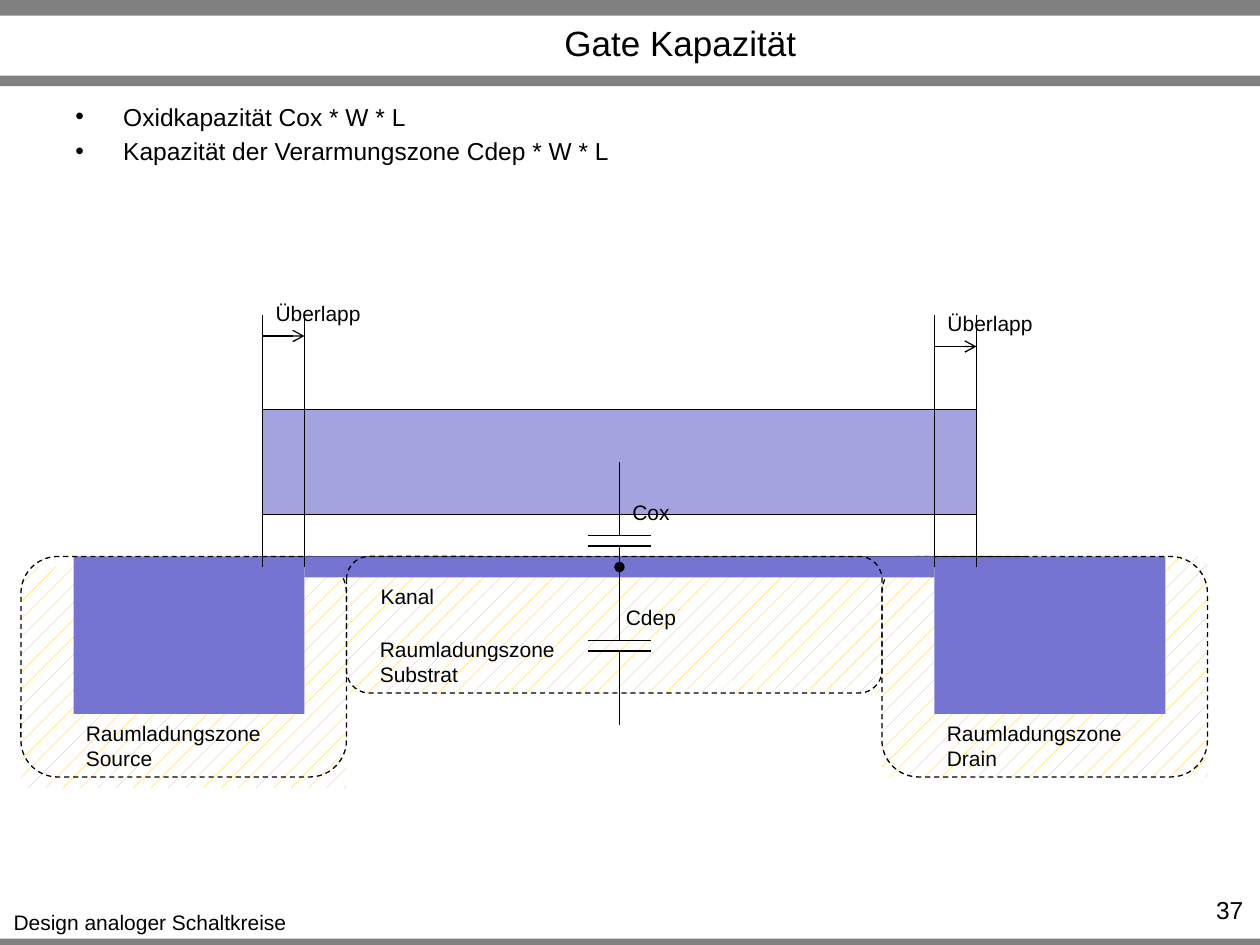
from dataclasses import dataclass

from lxml import etree
from pptx import Presentation
from pptx import util as u
from pptx.dml.color import RGBColor
from pptx.enum import dml, shapes, text
from pptx.oxml import ns


@dataclass(frozen=True)
class Theme:
    font: str = "Arial"
    ink: str = "000000"
    paper: str = "FFFFFF"
    bar: str = "808080"
    gate: str = "A3A3E0"
    doped: str = "7575D1"
    hatch: str = "FFC000"
    title: int = 20
    body: int = 14
    label: int = 12
    stroke: float = 0.75


THEME = Theme()
LEFT, CENTER, RIGHT = (text.PP_ALIGN.LEFT, text.PP_ALIGN.CENTER, text.PP_ALIGN.RIGHT)


def color(code):
    return RGBColor.from_string(code)


def cells(count):
    return u.Inches(count / 12)


def add_xml(parent, tag, **attributes):
    return etree.SubElement(parent, ns.qn(tag), attributes)


def write(frame, content, size=THEME.label, align=LEFT, wrap=True,
          anchor=text.MSO_ANCHOR.TOP, bullet=None, gap=0):
    frame.word_wrap = wrap
    frame.vertical_anchor = anchor
    for index, line in enumerate(content.split("\n")):
        para = frame.paragraphs[0] if index == 0 else frame.add_paragraph()
        para.alignment = align
        para.space_before = u.Pt(gap if index else 0)
        if bullet:
            properties = para._p.get_or_add_pPr()
            properties.set("marL", str(u.Inches(0.38)))
            properties.set("indent", str(u.Inches(-0.38)))
            add_xml(properties, "a:buFont", typeface=THEME.font)
            add_xml(properties, "a:buChar", char=bullet)
        span = para.add_run()
        span.text = line
        span.font.name = THEME.font
        span.font.size = u.Pt(size)
        span.font.color.rgb = color(THEME.ink)


class Sketch:
    def __init__(self, deck, theme):
        self.theme = theme
        self.page = deck.slides.add_slide(deck.slide_layouts[5])

    def title(self, column, row, width, height, content):
        box = self.page.shapes.title
        box.left, box.top, box.width, box.height = map(cells, (column, row, width, height))
        write(box.text_frame, content, self.theme.title, CENTER,
              anchor=text.MSO_ANCHOR.MIDDLE)

    def label(self, column, row, width, height, content, **style):
        box = self.page.shapes.add_textbox(*map(cells, (column, row, width, height)))
        write(box.text_frame, content, **style)

    def tag(self, column, row, width, content, align=CENTER):
        height = 3.6 if "\n" not in content else 6
        self.label(column, row, width, height, content, align=align, wrap=False)

    def area(self, column, row, width, height, fill=None, outline=False,
             kind=shapes.MSO_SHAPE.RECTANGLE):
        shape = self.page.shapes.add_shape(kind, *map(cells, (column, row, width, height)))
        shape.shadow.inherit = False
        if fill:
            shape.fill.solid()
            shape.fill.fore_color.rgb = color(fill)
        else:
            shape.fill.background()
        if outline:
            self.stroke(shape.line)
        else:
            shape.line.fill.background()
        return shape

    def hatched(self, column, row, width, height):
        shape = self.area(column, row, width, height,
                          kind=shapes.MSO_SHAPE.FLOWCHART_PROCESS)
        shape.fill.patterned()
        shape.fill.pattern = dml.MSO_PATTERN.PERCENT_5
        shape.fill.fore_color.rgb = color(self.theme.hatch)
        shape.fill.back_color.rgb = color(self.theme.paper)

    def dashed(self, column, row, width, height):
        shape = self.area(column, row, width, height, outline=True,
                          kind=shapes.MSO_SHAPE.ROUNDED_RECTANGLE)
        shape.line.dash_style = dml.MSO_LINE.DASH

    def stroke(self, line):
        line.color.rgb = color(self.theme.ink)
        line.width = u.Pt(self.theme.stroke)

    def line(self, x1, y1, x2, y2, end=None):
        connector = self.page.shapes.add_connector(
            shapes.MSO_CONNECTOR.STRAIGHT, *map(cells, (x1, y1, x2, y2)))
        self.stroke(connector.line)
        if end:
            add_xml(connector.line._get_or_add_ln(), "a:tailEnd", type=end)
        add_xml(connector._element.spPr, "a:effectLst")

    def capacitor(self, column, row, lead=7, reach=3):
        upper, lower = row + lead, row + lead + 1
        self.line(column, row, column, upper)
        for plate in (upper, lower):
            self.line(column - reach, plate, column + reach, plate)
        self.line(column, lower, column, lower + lead)

    def overlap(self, column, row, width=4):
        for edge in (column, column + width):
            self.line(edge, 54, edge, 30)
        self.line(column, row, column + width, row, end="arrow")
        self.tag(column, row - 4, 10.6, "Überlapp")


def main():
    deck = Presentation()
    deck.slide_width, deck.slide_height = cells(120), cells(90)
    sketch = Sketch(deck, THEME)
    surface, middle = 53, 59
    source, drain = 7, 89
    substrate_zone = (33, surface, 51, 13)
    source_zone = (2, surface, 31, 21)
    drain_zone = (84, surface, 31, 21)

    for row, height in ((89.4, 1), (0, 1.5), (7.2, 1)):
        sketch.area(0, row, 120, height, THEME.bar)
    sketch.tag(0, 86, 28.6, "Design analoger Schaltkreise")
    sketch.title(15.6, 1.7, 98.4, 4.6, "Gate Kapazität")
    sketch.label(6, 9.1, 108, 5.9,
                 "Oxidkapazität Cox * W * L\nKapazität der Verarmungszone Cdep * W * L",
                 size=THEME.body, bullet="•", gap=3)
    sketch.label(109.2, 84.7, 10.4, 2.9, "37", size=THEME.body, align=RIGHT)

    sketch.hatched(*substrate_zone)
    sketch.hatched(*drain_zone)
    sketch.area(drain, surface, 22, 15, THEME.doped)
    sketch.area(25, 39, 68, 10, THEME.gate, outline=True)
    sketch.dashed(*drain_zone)
    sketch.line(24, surface, 98, surface)
    sketch.hatched(2, surface + 1, 31, 21)
    sketch.area(source, surface, 22, 15, THEME.doped)
    sketch.dashed(*source_zone)
    sketch.area(29, surface, 60, 2, THEME.doped)
    sketch.dashed(*substrate_zone)

    sketch.tag(35, 55, 7.6, "Kanal")
    for column, row, name in ((source, 68, "Source"), (35, 60, "Substrat"),
                              (drain, 68, "Drain")):
        sketch.tag(column, row, 19.2, f"Raumladungszone\n{name}", align=LEFT)

    sketch.overlap(drain, 33)
    sketch.overlap(25, 32)
    sketch.capacitor(middle, 44)
    sketch.line(middle, 56, middle, 54, end="oval")
    sketch.capacitor(middle, 54)
    sketch.tag(middle, 47, 6, "Cox")
    sketch.tag(58.4, 57, 7.2, "Cdep")
    deck.save("out.pptx")


if __name__ == "__main__":
    main()
